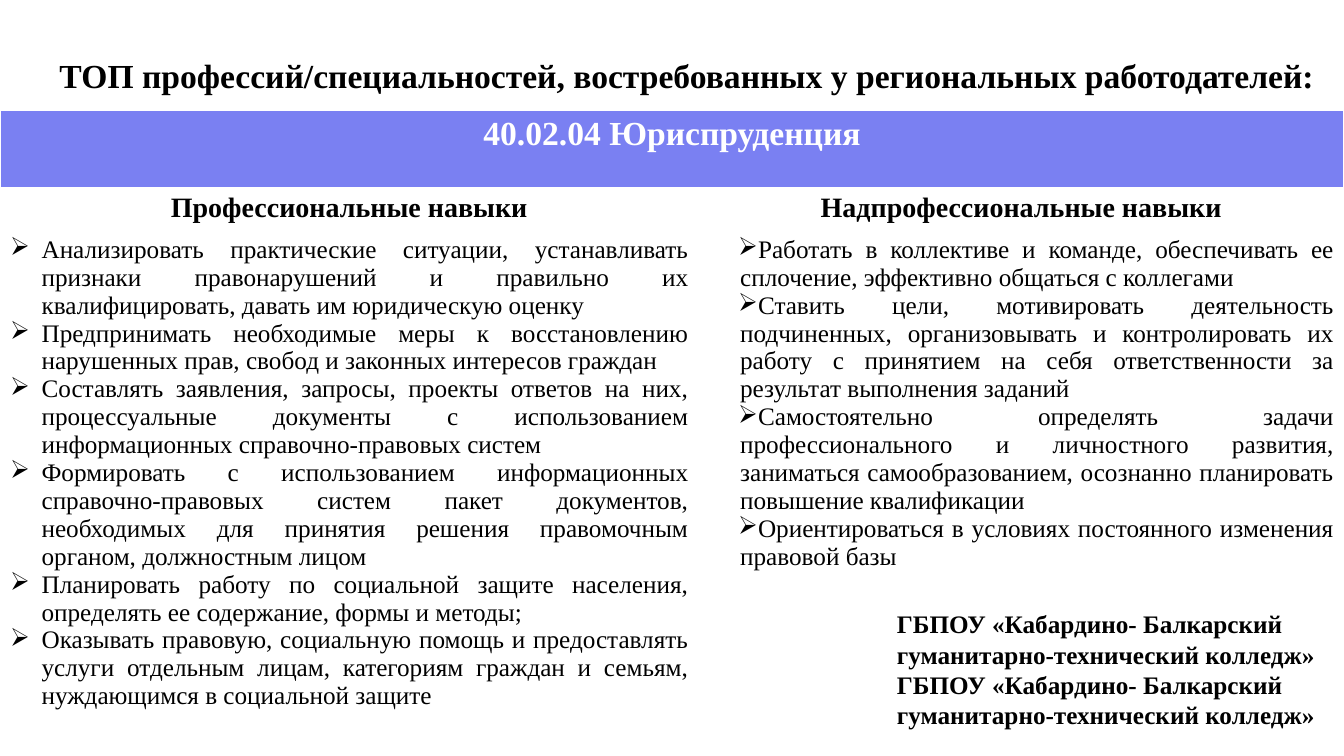
import pptx
import pptx.util
import pptx.dml.color
import pptx.enum.text
import pptx.oxml.ns
from lxml import etree

Pt = pptx.util.Pt
ALIGN = pptx.enum.text.PP_ALIGN
ANCHOR = pptx.enum.text.MSO_ANCHOR
COLORS = {"text": "000000", "band": "7A80F2", "band_text": "FFFFFF"}
FONT = "Times New Roman"

TITLE = "ТОП профессий/специальностей, востребованных у региональных работодателей:"
SPECIALTY = "40.02.04 Юриспруденция"
COLLEGE = "ГБПОУ «Кабардино- Балкарский гуманитарно-технический колледж»"
# Each column: heading, first-line indent, skills
SKILL_COLUMNS = [
    ("Профессиональные навыки", -22.5, [
        "Анализировать практические ситуации, устанавливать признаки правонарушений и правильно их "
        "квалифицировать, давать им юридическую оценку",
        "Предпринимать необходимые меры к восстановлению нарушенных прав, свобод и законных интересов граждан",
        "Составлять заявления, запросы, проекты ответов на них, процессуальные документы с использованием "
        "информационных справочно-правовых систем",
        "Формировать с использованием информационных справочно-правовых систем пакет документов, "
        "необходимых для принятия решения правомочным органом, должностным лицом",
        "Планировать работу по социальной защите населения, определять ее содержание, формы и методы;",
        "Оказывать правовую, социальную помощь и предоставлять услуги отдельным лицам, категориям граждан "
        "и семьям, нуждающимся в социальной защите",
    ]),
    ("Надпрофессиональные навыки", -1.5, [
        "Работать в коллективе и команде, обеспечивать ее сплочение, эффективно общаться с коллегами",
        "Ставить цели, мотивировать деятельность подчиненных, организовывать и контролировать их работу "
        "с принятием на себя ответственности за результат выполнения заданий",
        "Самостоятельно определять задачи профессионального и личностного развития, заниматься "
        "самообразованием, осознанно планировать повышение квалификации",
        "Ориентироваться в условиях постоянного изменения правовой базы",
    ]),
]


def add_bullet(paragraph, indent):
    properties = paragraph._p.get_or_add_pPr()
    properties.set("marL", str(Pt(22.5)))
    properties.set("indent", str(Pt(indent)))
    bullet = etree.SubElement(properties, pptx.oxml.ns.qn("a:buChar"))
    bullet.set("char", "➢")


def write_paragraphs(frame, texts, size, bold=True, align=ALIGN.LEFT, color="text", indent=None):
    for number, text in enumerate(texts):
        paragraph = frame.add_paragraph() if number else frame.paragraphs[0]
        paragraph.alignment = align
        if indent is not None:
            add_bullet(paragraph, indent)
        run = paragraph.add_run()
        run.text = text
        run.font.name = FONT
        run.font.size = Pt(size)
        run.font.bold = bold
        run.font.color.rgb = pptx.dml.color.RGBColor.from_string(COLORS[color])


def add_title(slide):
    title = slide.shapes.title
    title.left, title.top, title.width, title.height = Pt(35.3), Pt(35.3), Pt(944.6), Pt(36)
    frame = title.text_frame
    frame.word_wrap = True
    frame.auto_size = pptx.enum.text.MSO_AUTO_SIZE.NONE
    frame.vertical_anchor = ANCHOR.TOP
    write_paragraphs(frame, [TITLE], 24)


def add_skills_table(slide):
    table = slide.shapes.add_table(3, 2, Pt(0), Pt(79.2), Pt(960), Pt(438.7)).table
    table.first_row = table.horz_banding = False
    for column, width in zip(table.columns, (499, 461)):
        column.width = Pt(width)
    for row, height in zip(table.rows, (54.7, 31, 353)):
        row.height = Pt(height)
    for cell in table.iter_cells():
        cell.fill.background()

    # Specialty band
    band = table.cell(0, 0)
    band.merge(table.cell(0, 1))
    band.fill.solid()
    band.fill.fore_color.rgb = pptx.dml.color.RGBColor.from_string(COLORS["band"])
    write_paragraphs(band.text_frame, [SPECIALTY], 24, align=ALIGN.CENTER, color="band_text")

    # Headings and skills
    for index, (heading, indent, skills) in enumerate(SKILL_COLUMNS):
        write_paragraphs(table.cell(1, index).text_frame, [heading], 20, align=ALIGN.CENTER)
        write_paragraphs(table.cell(2, index).text_frame, skills, 18, bold=False,
                         align=ALIGN.JUSTIFY, indent=indent)


def add_college(slide):
    box = slide.shapes.add_textbox(Pt(633.6), Pt(431.3), Pt(372.2), Pt(94.3))
    box.text_frame.word_wrap = True
    write_paragraphs(box.text_frame, [COLLEGE, COLLEGE], 18)


def main():
    presentation = pptx.Presentation()
    presentation.slide_width, presentation.slide_height = Pt(960), Pt(540)
    slide = presentation.slides.add_slide(presentation.slide_layouts[5])
    add_title(slide)
    add_skills_table(slide)
    add_college(slide)
    presentation.save("out.pptx")


if __name__ == "__main__":
    main()
